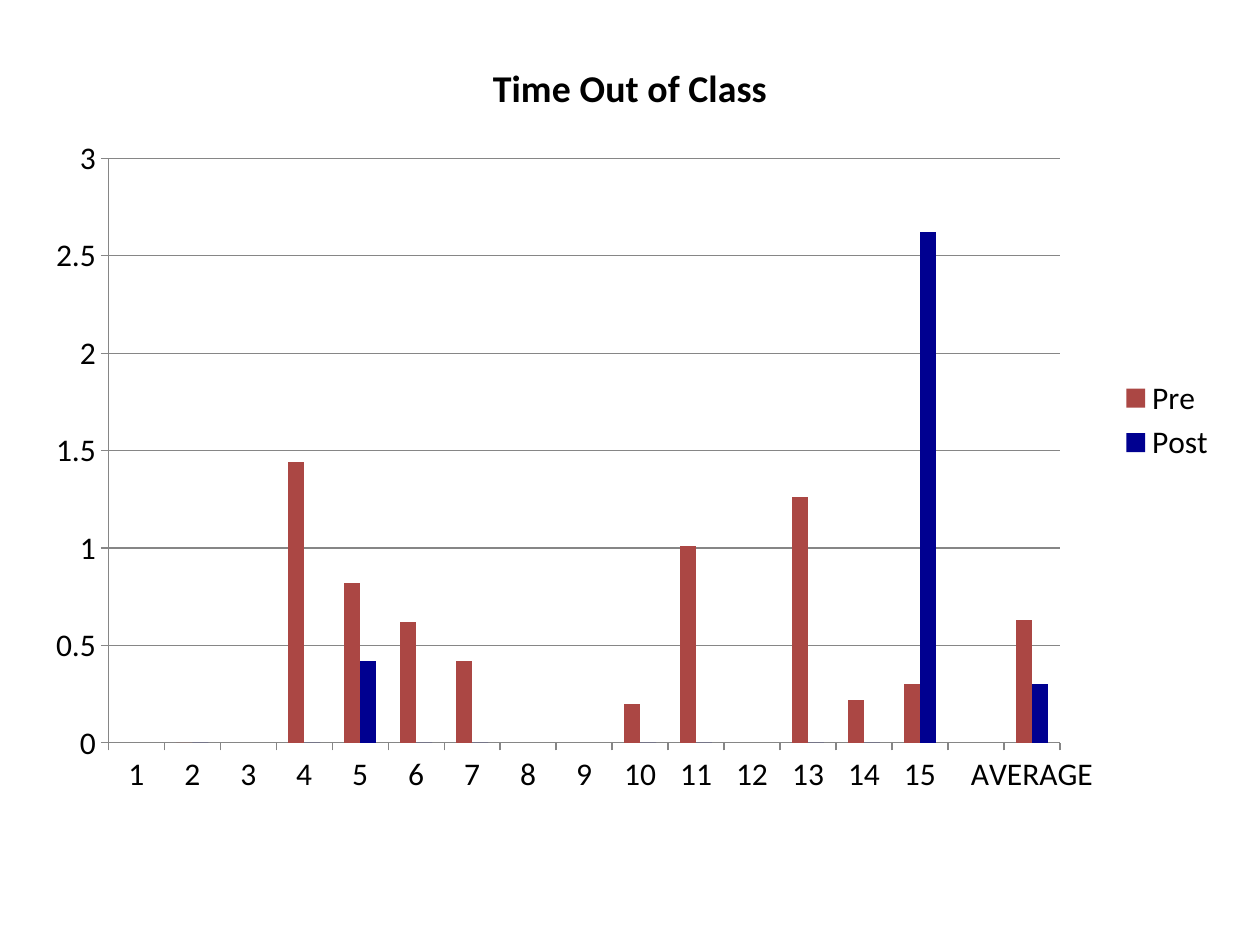
from lxml.etree import SubElement
from pptx import Presentation
from pptx.chart.data import CategoryChartData
from pptx.dml.color import RGBColor
from pptx.enum.chart import XL_CHART_TYPE, XL_LEGEND_POSITION, XL_TICK_MARK
from pptx.oxml.ns import qn
from pptx.util import Cm, Pt

FONT = "Calibri"
BLACK = "000000"
AXIS_GRAY = "868686"
STUDENTS = [str(number) for number in range(1, 16)] + ["", "AVERAGE"]
SERIES = {
    "Pre": ("AB4744", [None, 0, None, 1.44, 0.82, 0.62, 0.42, None, None,
                       0.2, 1.01, None, 1.26, 0.22, 0.3, None, 0.63]),
    "Post": ("000090", [None, 0, None, 0, 0.42, 0, 0, None, None,
                        0, 0, None, 0, 0, 2.62, None, 0.3]),
}


def color(hex_string):
    return RGBColor.from_string(hex_string)


def format_font(font, size=18, bold=False, fill=BLACK):
    font.name = FONT
    font.size = Pt(size)
    font.bold = bold
    font.color.rgb = color(fill)


def write_text(frame, text, **style):
    run = frame.paragraphs[0].add_run()
    run.text = text
    format_font(run.font, **style)


def style_line(line):
    line.color.rgb = color(AXIS_GRAY)
    line.width = Pt(0.75)


def style_axis(axis):
    axis.major_tick_mark = XL_TICK_MARK.OUTSIDE
    axis.minor_tick_mark = XL_TICK_MARK.NONE
    style_line(axis.format.line)
    format_font(axis.tick_labels.font)


def place_plot(chart, **fractions):
    plot_area = chart._chartSpace.chart.plotArea
    for old_layout in plot_area.findall(qn("c:layout")):
        plot_area.remove(old_layout)
    layout = plot_area.makeelement(qn("c:layout"), {})
    plot_area.insert(0, layout)
    manual = SubElement(layout, qn("c:manualLayout"))
    settings = {"layoutTarget": "inner", "xMode": "edge", "yMode": "edge", **fractions}
    for tag, value in settings.items():
        SubElement(manual, qn(f"c:{tag}")).set("val", str(value))


def add_time_chart(slide, left, top, width, height):
    data = CategoryChartData()
    data.categories = STUDENTS
    for name, (_, hours) in SERIES.items():
        data.add_series(name, hours)
    chart = slide.shapes.add_chart(
        XL_CHART_TYPE.COLUMN_CLUSTERED, left, top, width, height, data).chart
    format_font(chart.font)

    chart.has_title = True
    write_text(chart.chart_title.text_frame, "Time Out of Class", size=21.6, bold=True)
    chart.chart_title.include_in_layout = False

    chart.has_legend = True
    chart.legend.position = XL_LEGEND_POSITION.RIGHT
    chart.legend.include_in_layout = False
    format_font(chart.legend.font)

    plot = chart.plots[0]
    plot.gap_width = 150
    plot.vary_by_categories = False
    for series in plot.series:
        series.format.fill.solid()
        series.format.fill.fore_color.rgb = color(SERIES[series.name][0])
        series.invert_if_negative = False

    style_axis(chart.category_axis)

    hours_axis = chart.value_axis
    style_axis(hours_axis)
    hours_axis.minimum_scale = 0
    hours_axis.maximum_scale = 3
    hours_axis.major_unit = 0.5
    hours_axis.has_major_gridlines = True
    style_line(hours_axis.major_gridlines.format.line)
    place_plot(chart, x=0.064, y=0.163, w=0.795, h=0.752)


def main():
    presentation = Presentation()
    presentation.slide_width = Cm(25.4)
    presentation.slide_height = Cm(19.05)
    slide = presentation.slides.add_slide(presentation.slide_layouts[6])
    add_time_chart(slide, Cm(0.64), Cm(0.64), Cm(24.13), Cm(15.67))
    presentation.save("out.pptx")


if __name__ == "__main__":
    main()
